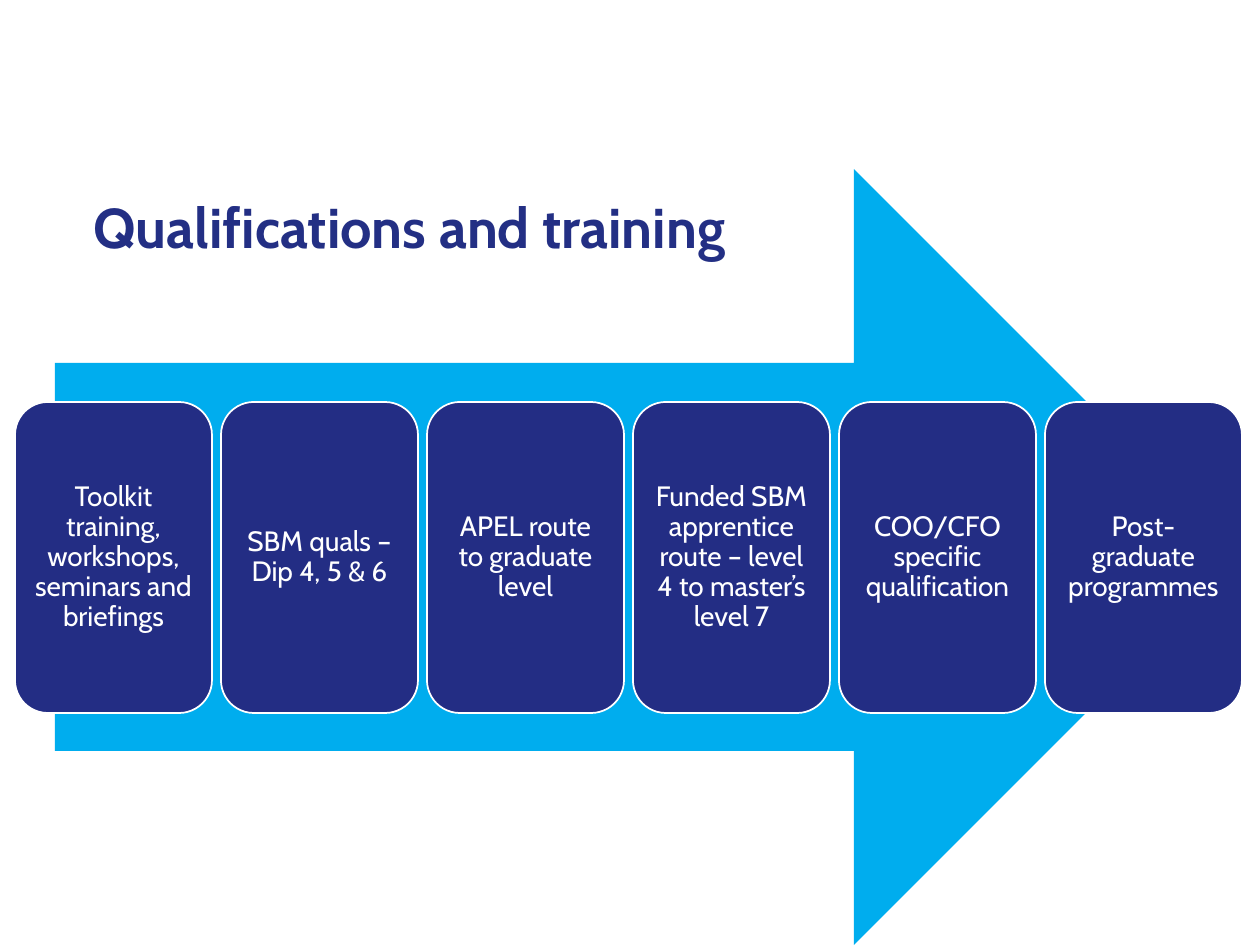
"""Build a slide showing the qualification stages along an arrow."""
from pptx import Presentation
from pptx.dml.color import RGBColor
from pptx.enum.shapes import MSO_SHAPE
from pptx.enum.text import MSO_ANCHOR, PP_ALIGN
from pptx.util import Pt

EMU_PER_PX = 914400 // 126
TITLE_NAVY = RGBColor(0x23, 0x2F, 0x84)
STAGE_NAVY = RGBColor(0x23, 0x2D, 0x84)
SKY = RGBColor(0x00, 0xAD, 0xEE)
WHITE = RGBColor(0xFF, 0xFF, 0xFF)

TITLE_FONT = {"name": "Cabin", "size": Pt(32), "bold": True}
STAGE_FONT = {"name": "Cabin", "size": Pt(16), "bold": False}
STAGE_LEFT, STAGE_TOP, STAGE_PITCH = 15, 402, 206
STAGE_WIDTH, STAGE_HEIGHT, STAGE_INSET = 197, 311, 9
STAGES = [
    "Toolkit training, workshops, seminars and briefings",
    "SBM quals – Dip 4, 5 & 6",
    "APEL route to graduate level",
    "Funded SBM apprentice route – level 4 to master’s level 7",
    "COO/CFO specific qualification",
    "Post-graduate programmes",
]


def px(*lengths):
    """Turn pixel lengths into EMU."""
    return [length * EMU_PER_PX for length in lengths]


def set_format(target, values):
    """Set each named attribute of the target."""
    for name, value in values.items():
        setattr(target, name, value)


def write_text(frame, text, font, color, align):
    """Write one formatted paragraph into a text frame."""
    frame.word_wrap = True
    paragraph = frame.paragraphs[0]
    set_format(paragraph, {"alignment": align, "line_spacing": 0.9})
    run = paragraph.add_run()
    run.text = text
    set_format(run.font, font)
    run.font.color.rgb = color


def add_title(slide, text):
    """Add the slide heading."""
    heading = slide.shapes.add_textbox(*px(81, 194, 1086, 136))
    write_text(heading.text_frame, text, TITLE_FONT, TITLE_NAVY, PP_ALIGN.LEFT)


def add_filled_shape(slide, preset, box, color):
    """Add a preset shape with a plain fill and no shadow."""
    shape = slide.shapes.add_shape(preset, *px(*box))
    shape.shadow.inherit = False
    shape.fill.solid()
    shape.fill.fore_color.rgb = color
    return shape


def add_arrow(slide):
    """Add the broad arrow behind the stages."""
    arrow = add_filled_shape(slide, MSO_SHAPE.RIGHT_ARROW, (55, 169, 1187, 776), SKY)
    arrow.line.fill.background()


def add_stage(slide, index, text):
    """Add one rounded stage card at its place in the row."""
    left = STAGE_LEFT + index * STAGE_PITCH
    box = (left, STAGE_TOP, STAGE_WIDTH, STAGE_HEIGHT)
    stage = add_filled_shape(slide, MSO_SHAPE.ROUNDED_RECTANGLE, box, STAGE_NAVY)
    stage.line.color.rgb = WHITE
    stage.line.width = Pt(1)
    inset = STAGE_INSET * EMU_PER_PX
    set_format(stage.text_frame, {
        "margin_left": inset, "margin_right": inset,
        "margin_top": inset, "margin_bottom": inset,
        "vertical_anchor": MSO_ANCHOR.MIDDLE,
    })
    write_text(stage.text_frame, text, STAGE_FONT, WHITE, PP_ALIGN.CENTER)


def main():
    """Build and save the slide."""
    deck = Presentation()
    deck.slide_width, deck.slide_height = px(1260, 945)
    slide = deck.slides.add_slide(deck.slide_layouts[6])
    add_title(slide, "Qualifications and training")
    add_arrow(slide)
    for index, text in enumerate(STAGES):
        add_stage(slide, index, text)
    deck.save("out.pptx")


if __name__ == "__main__":
    main()
